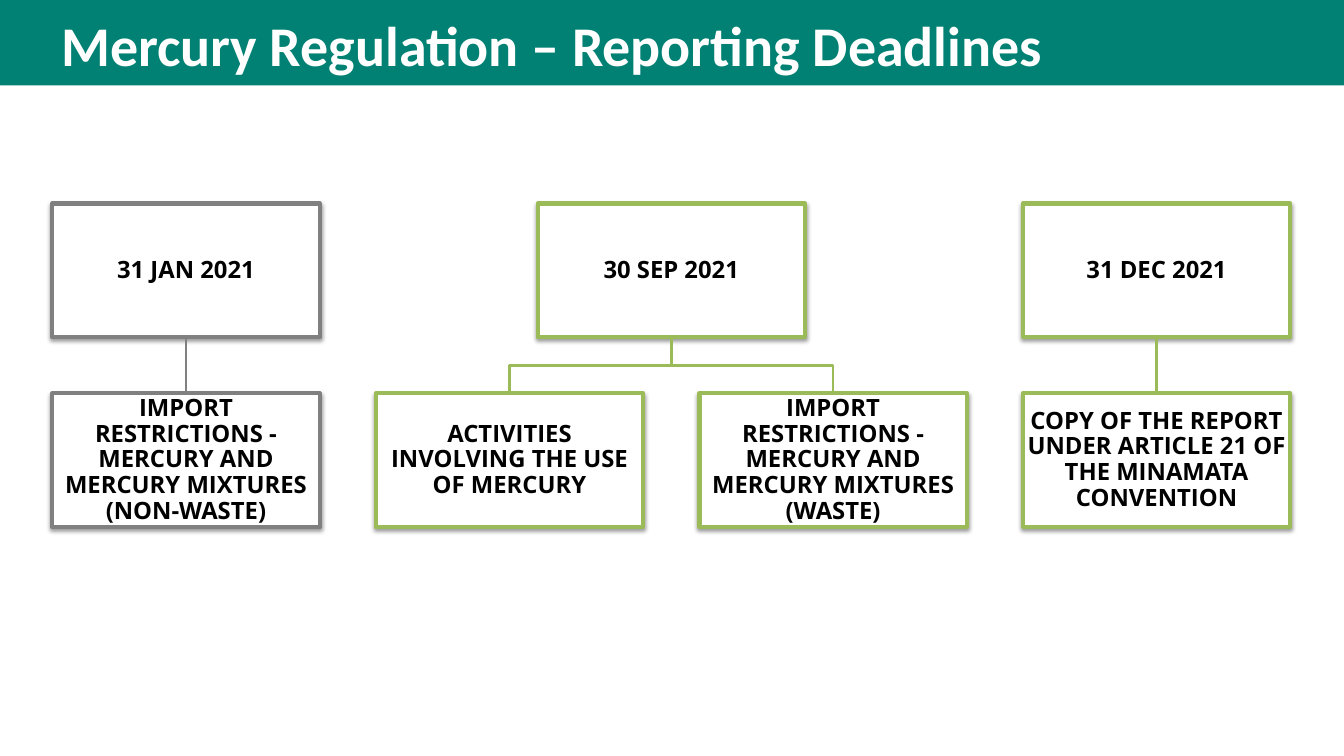
from lxml import etree
from pptx import Presentation
from pptx import util as u
from pptx.dml.color import RGBColor
from pptx.enum import shapes, text
from pptx.oxml.ns import qn

COLOURS = {"teal": "008173", "grey": "808080", "green": "9BBB59",
           "white": "FFFFFF", "black": "000000"}
LEFT, PITCH, WIDTH, HEIGHT = 37.4, 231.1, 191, 95.5
DATE_TOP, DUTY_TOP = 145.4, 280.9
DEADLINES = [
    ("31 JAN 2021", "grey",
     ["IMPORT RESTRICTIONS - MERCURY AND MERCURY MIXTURES (NON-WASTE)"]),
    ("30 SEP 2021", "green",
     ["ACTIVITIES INVOLVING THE USE OF MERCURY",
      "IMPORT RESTRICTIONS - MERCURY AND MERCURY MIXTURES (WASTE)"]),
    ("31 DEC 2021", "green",
     ["COPY OF THE REPORT UNDER ARTICLE 21 OF THE MINAMATA CONVENTION"]),
]


def colour(name):
    return RGBColor.from_string(COLOURS[name])


class DeadlineSlide:
    def __init__(self, deck):
        self.page = deck.slides.add_slide(deck.slide_layouts[6])
        self.heading_font = "Calibri"
        self.card_font = "Open Sans"

    def label(self, box, words, font, size, ink):
        box.text_frame.word_wrap = True
        para = box.text_frame.paragraphs[0]
        para.text = words
        para.font.name = font
        para.font.size = u.Pt(size)
        para.font.bold = True
        para.font.color.rgb = colour(ink)
        return para

    def rectangle(self, left, top, width, height, fill):
        box = self.page.shapes.add_shape(
            shapes.MSO_SHAPE.RECTANGLE, u.Pt(left), u.Pt(top), u.Pt(width), u.Pt(height))
        box.shadow.inherit = False
        box.fill.solid()
        box.fill.fore_color.rgb = colour(fill)
        box.line.fill.background()
        return box

    def heading(self, words):
        self.rectangle(0, 0, 960, 61, "teal")
        box = self.page.shapes.add_textbox(u.Pt(36.7), u.Pt(4), u.Pt(886), u.Pt(53))
        self.label(box, words, self.heading_font, 40, "white")

    def card(self, left, top, words, border):
        box = self.rectangle(left, top, WIDTH, HEIGHT, "white")
        self.outline(box, border, 3)
        effects = box._element.spPr.find(qn("a:effectLst"))
        shadow = etree.SubElement(
            effects, qn("a:outerShdw"), blurRad=str(u.Pt(3.1)), dist=str(u.Pt(1.6)),
            dir="5400000", rotWithShape="0")
        tint = etree.SubElement(shadow, qn("a:srgbClr"), val=COLOURS["black"])
        etree.SubElement(tint, qn("a:alpha"), val="38000")
        frame = box.text_frame
        frame.margin_left = frame.margin_right = u.Pt(0.8)
        frame.margin_top = frame.margin_bottom = u.Pt(0.8)
        frame.vertical_anchor = text.MSO_ANCHOR.MIDDLE
        para = self.label(box, words, self.card_font, 17, "black")
        para.alignment = text.PP_ALIGN.CENTER
        para.line_spacing = 0.9
        return box

    def outline(self, shape, ink, weight):
        shape.line.color.rgb = colour(ink)
        shape.line.width = u.Pt(weight)

    def straight_link(self, upper, lower, ink):
        link = self.page.shapes.add_connector(shapes.MSO_CONNECTOR.STRAIGHT, 0, 0, 0, 0)
        link.begin_connect(upper, 2)
        link.end_connect(lower, 0)
        self.outline(link, ink, 2)
        etree.SubElement(link._element.spPr, qn("a:effectLst"))

    def bent_link(self, upper, lower, ink):
        start_x = upper.left + upper.width // 2
        end_x = lower.left + lower.width // 2
        start_y = upper.top + upper.height
        middle_y = (start_y + lower.top) // 2
        builder = self.page.shapes.build_freeform(start_x, start_y)
        builder.add_line_segments(
            [(start_x, middle_y), (end_x, middle_y), (end_x, lower.top)], close=False)
        link = builder.convert_to_shape()
        link.fill.background()
        link.shadow.inherit = False
        self.outline(link, ink, 2)

    def deadline(self, column, date, ink, duties):
        centre = column + (len(duties) - 1) / 2
        upper = self.card(LEFT + centre * PITCH, DATE_TOP, date, ink)
        link = self.straight_link if len(duties) == 1 else self.bent_link
        for offset, duty in enumerate(duties):
            lower = self.card(LEFT + (column + offset) * PITCH, DUTY_TOP, duty, ink)
            link(upper, lower, ink)


def main():
    deck = Presentation()
    deck.slide_width, deck.slide_height = u.Pt(960), u.Pt(540)
    slide = DeadlineSlide(deck)
    slide.heading("Mercury Regulation – Reporting Deadlines")
    column = 0
    for date, ink, duties in DEADLINES:
        slide.deadline(column, date, ink, duties)
        column += len(duties)
    deck.save("out.pptx")


if __name__ == "__main__":
    main()
